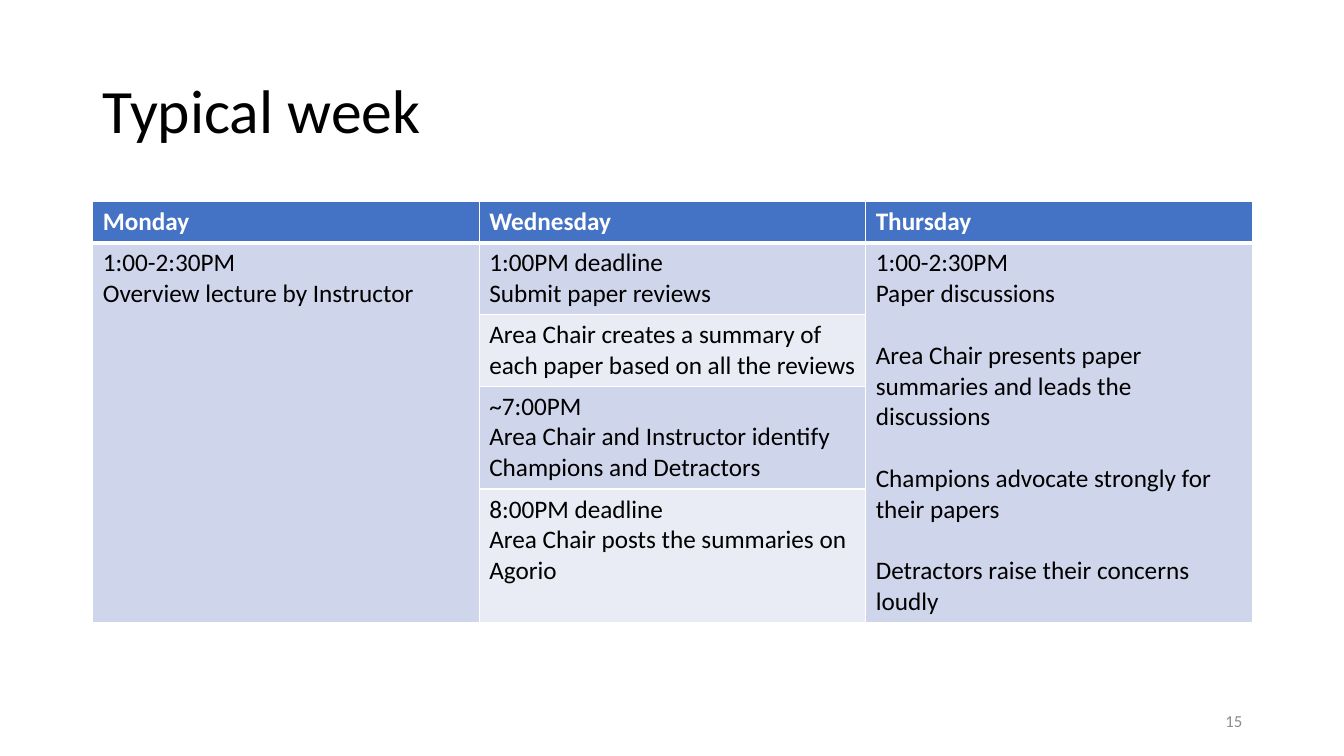
from lxml import etree
from pptx import Presentation
from pptx.dml.color import RGBColor
from pptx.enum.text import MSO_ANCHOR, MSO_AUTO_SIZE, PP_ALIGN
from pptx.oxml.ns import qn
from pptx.util import Inches, Pt

LEFT, RIGHT = PP_ALIGN.LEFT, PP_ALIGN.RIGHT
TOP, MIDDLE = MSO_ANCHOR.TOP, MSO_ANCHOR.MIDDLE
NO_AUTOFIT = MSO_AUTO_SIZE.NONE

TITLE_ONLY = 5
FONT = "Calibri"
BLACK, WHITE, GRAY = "000000", "FFFFFF", "8C8C8C"
HEADER_FILL, DARK_BAND, LIGHT_BAND = "4472C4", "CFD5EA", "E9EBF5"
BLANK_LINE = 22

DAYS = ["Monday", "Wednesday", "Thursday"]
ROW_HEIGHTS = [0.41, 0.71, 0.71, 1.02, 1.26]
MONDAY = ["1:00-2:30PM", "Overview lecture by Instructor"]
WEDNESDAY = [
    ["1:00PM deadline", "Submit paper reviews"],
    ["Area Chair creates a summary of each paper based on all the reviews"],
    ["~7:00PM", "Area Chair and Instructor identify Champions and Detractors"],
    ["8:00PM deadline", "Area Chair posts the summaries on Agorio"],
]
THURSDAY = [
    "1:00-2:30PM",
    "Paper discussions",
    "Area Chair presents paper summaries and leads the discussions",
    "Champions advocate strongly for their papers",
    "Detractors raise their concerns loudly",
]


def rgb(color):
    return RGBColor.from_string(color)


def write_text(frame, lines, size=18, color=BLACK, bold=False, align=LEFT,
               anchor=TOP, line_spacing=1.0, gap_from=None):
    """Write one paragraph per line; those from index gap_from on get a gap above."""
    frame.word_wrap = True
    frame.vertical_anchor = anchor
    for index, line in enumerate(lines):
        paragraph = frame.paragraphs[0] if index == 0 else frame.add_paragraph()
        paragraph.alignment = align
        paragraph.line_spacing = line_spacing
        if gap_from is not None and index >= gap_from:
            paragraph.space_before = Pt(BLANK_LINE)
        run = paragraph.add_run()
        run.text = line
        run.font.name = FONT
        run.font.size = Pt(size)
        run.font.bold = bold
        run.font.color.rgb = rgb(color)


def set_borders(cell, bottom=1, top=1):
    properties = cell._tc.get_or_add_tcPr()
    widths = {"a:lnL": 1, "a:lnR": 1, "a:lnT": top, "a:lnB": bottom}
    for index, (side, width) in enumerate(widths.items()):
        line = etree.Element(qn(side), w=str(Pt(width)))
        fill = etree.SubElement(line, qn("a:solidFill"))
        etree.SubElement(fill, qn("a:srgbClr"), val=WHITE)
        properties.insert(index, line)


def style_cell(cell, row):
    cell.fill.solid()
    band = DARK_BAND if row % 2 else LIGHT_BAND
    cell.fill.fore_color.rgb = rgb(HEADER_FILL if row == 0 else band)
    set_borders(cell, bottom=3 if row == 0 else 1, top=3 if row == 1 else 1)


def add_title(slide, text):
    title = slide.shapes.title
    title.left, title.top = Inches(0.92), Inches(0.4)
    title.width, title.height = Inches(11.5), Inches(1.45)
    title.text_frame.auto_size = NO_AUTOFIT
    write_text(title.text_frame, [text], size=44, anchor=MIDDLE, line_spacing=0.9)


def add_schedule(slide):
    last_row = len(WEDNESDAY)
    table = slide.shapes.add_table(
        len(ROW_HEIGHTS), len(DAYS), Inches(0.92), Inches(2),
        Inches(11.5), Inches(sum(ROW_HEIGHTS))).table
    for row, height in enumerate(ROW_HEIGHTS):
        table.rows[row].height = Inches(height)
        for column in range(len(DAYS)):
            style_cell(table.cell(row, column), row)
    for column in (0, 2):
        table.cell(1, column).merge(table.cell(last_row, column))

    for column, day in enumerate(DAYS):
        write_text(table.cell(0, column).text_frame, [day], color=WHITE, bold=True)
    write_text(table.cell(1, 0).text_frame, MONDAY)
    for row, lines in enumerate(WEDNESDAY, start=1):
        write_text(table.cell(row, 1).text_frame, lines)
    write_text(table.cell(1, 2).text_frame, THURSDAY, gap_from=2)


def add_slide_number(slide, number):
    box = slide.shapes.add_textbox(Inches(9.42), Inches(6.95), Inches(3), Inches(0.4))
    write_text(box.text_frame, [number], size=12, color=GRAY, align=RIGHT, anchor=MIDDLE)


def main():
    presentation = Presentation()
    presentation.slide_width = Inches(13.33)
    presentation.slide_height = Inches(7.5)
    slide = presentation.slides.add_slide(presentation.slide_layouts[TITLE_ONLY])
    add_title(slide, "Typical week")
    add_schedule(slide)
    add_slide_number(slide, "15")
    presentation.save("out.pptx")


if __name__ == "__main__":
    main()
